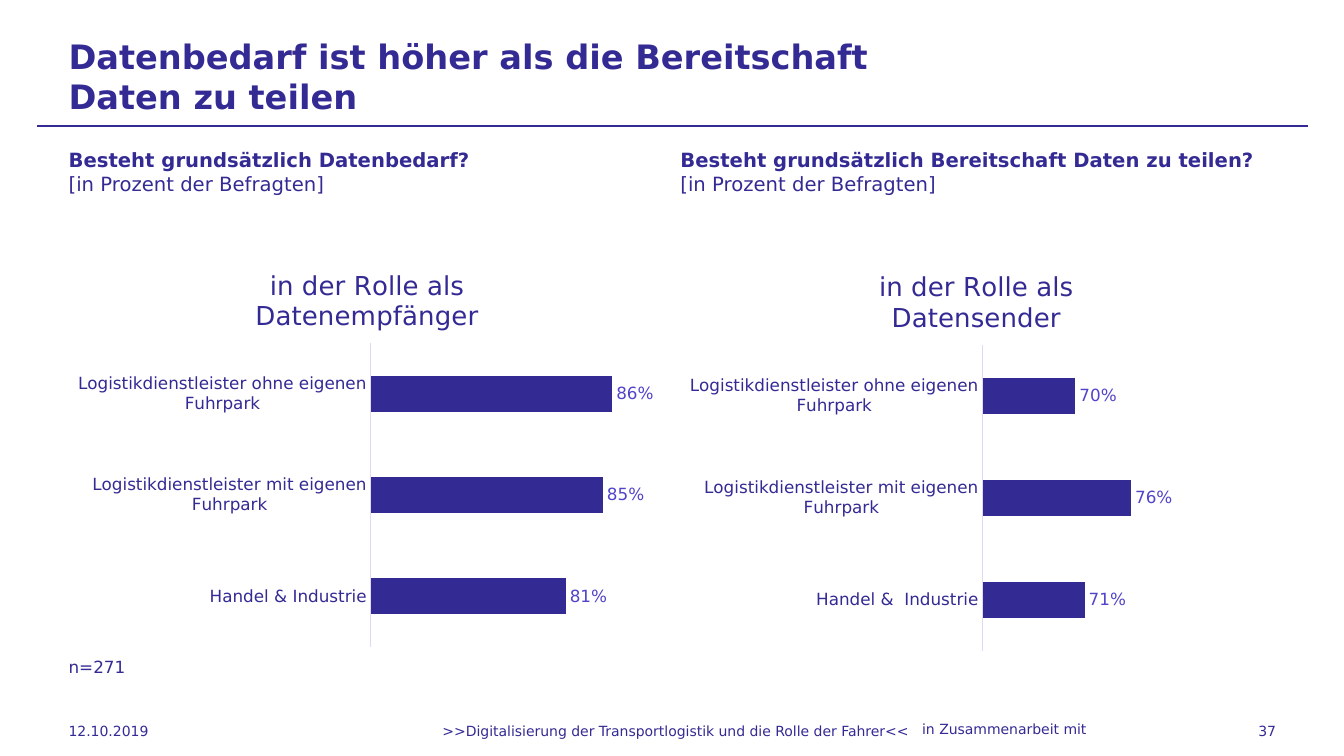
from lxml import etree
from pptx import Presentation
from pptx import util as u
from pptx.chart.data import CategoryChartData
from pptx.dml.color import RGBColor
from pptx.enum import chart as charts, shapes, text
from pptx.oxml import ns

INK = "342A94"
LABEL = "5144CA"
AXIS = "DCDAF4"
FONT = "DejaVu Sans"
LEFT, RIGHT = 49, 486


def color(value):
    return RGBColor.from_string(value)


def set_font(font, size, ink=INK, bold=False):
    font.name = FONT
    font.size = u.Pt(size)
    font.bold = bold
    font.color.rgb = color(ink)


def add_span(para, words, size=10, bold=False):
    for index, line in enumerate(words.split("\n")):
        if index:
            para.add_line_break()
        if line:
            span = para.add_run()
            span.text = line
            set_font(span.font, size, bold=bold)


def place(parent, position, **values):
    layout = parent.find(ns.qn("c:layout"))
    if layout is None:
        layout = etree.Element(ns.qn("c:layout"))
        parent.insert(position, layout)
    manual = etree.SubElement(layout, ns.qn("c:manualLayout"))
    for name, value in values.items():
        etree.SubElement(manual, ns.qn(f"c:{name}"), val=str(value))


class Page:
    def __init__(self, deck):
        self.page = deck.slides.add_slide(deck.slide_layouts[6])

    def box(self, left, top, width, height, *spans, align="LEFT", anchor="TOP", wrap=True):
        box = self.page.shapes.add_textbox(*map(u.Pt, (left, top, width, height)))
        frame = box.text_frame
        frame.word_wrap = wrap
        frame.vertical_anchor = text.MSO_ANCHOR[anchor]
        frame.margin_left = frame.margin_right = frame.margin_top = frame.margin_bottom = 0
        para = frame.paragraphs[0]
        para.alignment = text.PP_ALIGN[align]
        for words, style in spans:
            add_span(para, words, **style)

    def rule(self, left, right, top):
        line = self.page.shapes.add_connector(
            shapes.MSO_CONNECTOR.STRAIGHT, *map(u.Pt, (left, top, right, top)))
        line.line.color.rgb = color(INK)
        line.line.width = u.Pt(0.75)
        etree.SubElement(line._element.spPr, ns.qn("a:effectLst"))

    def bars(self, left, top, width, height, title, title_left, categories, values):
        data = CategoryChartData(number_format="0%")
        data.categories = categories
        data.add_series("Series 1", values)
        chart = self.page.shapes.add_chart(
            charts.XL_CHART_TYPE.BAR_CLUSTERED,
            *map(u.Pt, (left, top, width, height)), data).chart
        set_font(chart.font, 10)
        chart.has_legend = False

        chart.has_title = True
        frame = chart.chart_title.text_frame
        for index, line in enumerate(title):
            para = frame.add_paragraph() if index else frame.paragraphs[0]
            add_span(para, line, size=18.6)

        plot = chart.plots[0]
        plot.gap_width = 182
        plot.vary_by_categories = False
        fill = plot.series[0].format.fill
        fill.solid()
        fill.fore_color.rgb = color(INK)
        plot.has_data_labels = True
        labels = plot.data_labels
        labels.show_value = True
        labels.position = charts.XL_LABEL_POSITION.OUTSIDE_END
        labels.number_format = "0%"
        labels.number_format_is_linked = False
        set_font(labels.font, 12, LABEL)

        axis = chart.category_axis
        axis.reverse_order = True
        axis.major_tick_mark = charts.XL_TICK_MARK.NONE
        axis.format.line.color.rgb = color(AXIS)
        axis.format.line.width = u.Pt(0.75)
        set_font(axis.tick_labels.font, 12)

        scale = chart.value_axis
        scale.minimum_scale, scale.maximum_scale = 0.6, 0.9
        scale.has_major_gridlines = False
        scale.visible = False

        chart_root = chart._chartSpace.chart
        place(chart_root.find(ns.qn("c:title")), 1,
              xMode="edge", yMode="edge", x=title_left, y=0.04)
        place(chart_root.find(ns.qn("c:plotArea")), 0,
              layoutTarget="inner", xMode="edge", yMode="edge",
              x=0.51, y=0.23, w=0.47, h=0.75)


def main():
    deck = Presentation()
    deck.slide_width, deck.slide_height = u.Pt(960), u.Pt(540)
    page = Page(deck)
    small, note = dict(size=10), dict(size=12)

    page.rule(26.6, 934, 90)
    page.box(LEFT, 43.2, 703, 22.3,
             ("Datenbedarf ist höher als die Bereitschaft\nDaten zu teilen",
              dict(size=24, bold=True)), anchor="MIDDLE")

    firms = ["Logistikdienstleister ohne eigenen Fuhrpark",
             "Logistikdienstleister mit eigenen Fuhrpark"]
    panels = [
        (LEFT, "Besteht grundsätzlich Datenbedarf?", 178.6, 289.4,
         "Datenempfänger", 0.31, "Handel & Industrie", (0.86, 0.85, 0.81)),
        (RIGHT, "Besteht grundsätzlich Bereitschaft Daten zu teilen?", 179.3, 291.6,
         "Datensender", 0.33, "Handel &  Industrie", (0.70, 0.76, 0.71)),
    ]
    for left, question, top, height, role, title_left, trade, values in panels:
        page.box(left, 106, 436, 34,
                 (question + "\n", dict(size=14, bold=True)),
                 ("[in Prozent der Befragten]", dict(size=14)))
        page.bars(left, top, 423.4, height, ("in der Rolle als", role), title_left,
                  firms + [trade], values)

    page.box(LEFT, 469, 41, 14.4, ("n=271", note), wrap=False)
    page.box(605, 515, 171, 12, ("in Zusammenarbeit mit", small), align="RIGHT")
    footers = [
        (173.5, 618, ">>Digitalisierung der Transportlogistik und die Rolle der Fahrer<<", "CENTER"),
        (LEFT, 113, "12.10.2019", "LEFT"),
        (803.5, 108, "37", "RIGHT"),
    ]
    for left, width, words, align in footers:
        page.box(left, 507.6, width, 28.8, (words, small), align=align, anchor="MIDDLE")

    deck.save("out.pptx")


if __name__ == "__main__":
    main()
